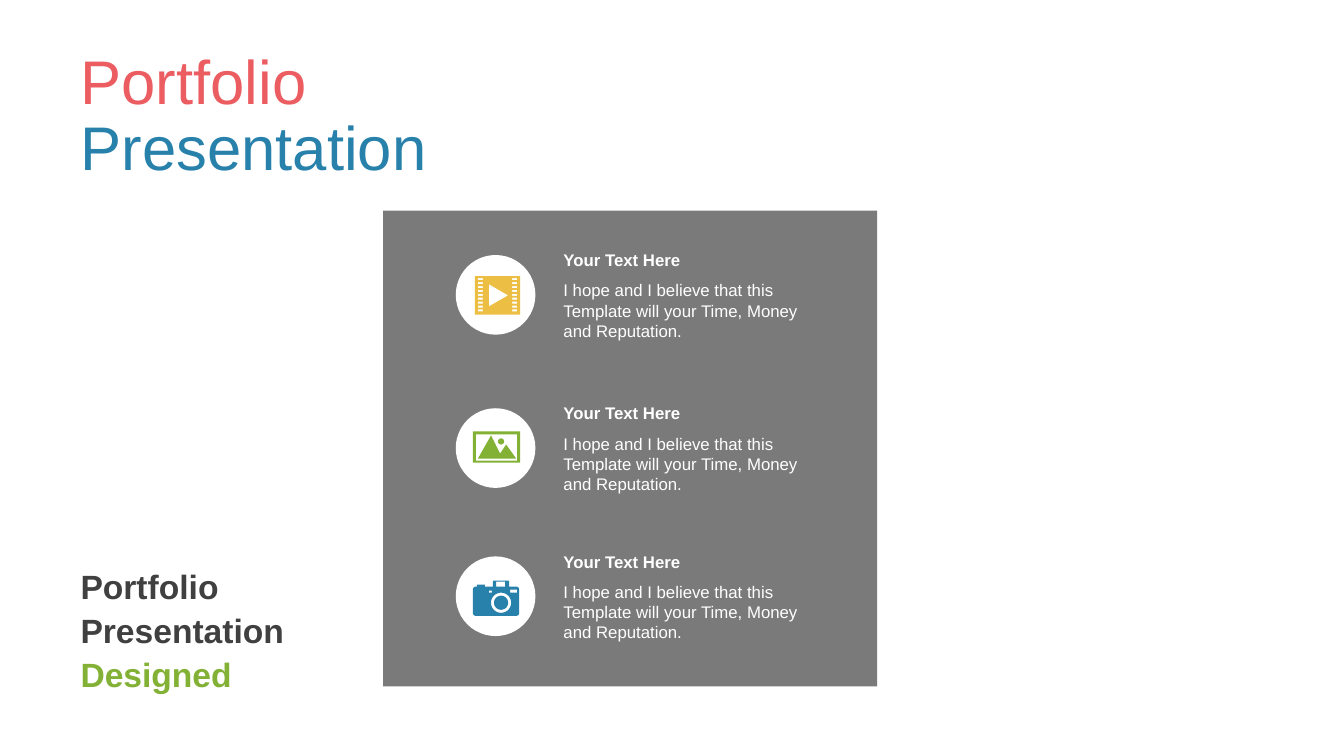
from math import cos, radians, sin

from lxml import etree
from pptx import Presentation
from pptx.dml.color import RGBColor
from pptx.enum.shapes import MSO_SHAPE
from pptx.enum.text import MSO_ANCHOR, MSO_AUTO_SIZE, PP_ALIGN
from pptx.oxml.ns import qn
from pptx.util import Inches, Pt

RECTANGLE, OVAL = MSO_SHAPE.RECTANGLE, MSO_SHAPE.OVAL
TOP, MIDDLE = MSO_ANCHOR.TOP, MSO_ANCHOR.MIDDLE
LEFT, NO_FIT = PP_ALIGN.LEFT, MSO_AUTO_SIZE.NONE
TITLE_ONLY = 5
COLORS = {
    "red": "EC5D62", "blue": "2781AB", "green": "82B135", "yellow": "EDBE44",
    "panel": "595959", "dark": "404040", "white": "FFFFFF",
}
HEADING = "Your Text Here"
BODY = "I hope and I believe that this Template will your Time, Money and Reputation."
DISC = 0.79


def paint(shape, color):
    """Give a shape a plain fill without outline or shadow."""
    shape.fill.solid()
    shape.fill.fore_color.rgb = RGBColor.from_string(COLORS[color])
    shape.line.fill.background()
    shape.shadow.inherit = False
    return shape


def add_preset(page, kind, box, color):
    """Add a painted preset shape in a box given in inches."""
    return paint(page.shapes.add_shape(kind, *map(Inches, box)), color)


def write(frame, spans, size, bold=False, spacing=1.0, anchor=TOP):
    """Write coloured spans into one left-aligned paragraph."""
    frame_format = {"word_wrap": True, "auto_size": NO_FIT, "vertical_anchor": anchor}
    for name, value in frame_format.items():
        setattr(frame, name, value)
    para = frame.paragraphs[0]
    para.alignment, para.line_spacing = LEFT, spacing
    for text, color in spans:
        if text == "\n":
            para.add_line_break()
            continue
        span = para.add_run()
        span.text = text
        for name, value in {"name": "Arial", "size": Pt(size), "bold": bold}.items():
            setattr(span.font, name, value)
        span.font.color.rgb = RGBColor.from_string(COLORS[color])


def add_text(page, box, spans, size, **options):
    """Add a text box in a box given in inches."""
    write(page.shapes.add_textbox(*map(Inches, box)).text_frame, spans, size, **options)


def rectangle(left, top, width, height):
    """Return the corners of a rectangle."""
    right, bottom = left + width, top + height
    return [(left, top), (right, top), (right, bottom), (left, bottom)]


def arc(x, y, radius, start=0, sweep=360):
    """Return points along a clockwise arc."""
    angles = [radians(start + sweep * step / 36) for step in range(37)]
    return [(x + radius * cos(angle), y + radius * sin(angle)) for angle in angles]


def film_contours():
    """Return a film frame with nine perforations a side and a play mark."""
    holes = [rectangle(x, 0.02 + row * 0.31 / 8, 0.05, 0.02)
             for row in range(9) for x in (0.03, 0.37)]
    play = [(0.14, 0.08), (0.14, 0.3), (0.33, 0.19)]
    return [rectangle(0, 0, 0.45, 0.38), play, *holes]


def landscape_contours():
    """Return a framed view of two peaks and a sun."""
    peaks = [(0.18, 0.04), (0.27, 0.22), (0.33, 0.13), (0.43, 0.27), (0.05, 0.27)]
    return [rectangle(0, 0, 0.47, 0.31), rectangle(0.03, 0.03, 0.41, 0.26),
            peaks, arc(0.28, 0.1, 0.03)]


def camera_contours():
    """Return a camera body with its lens, viewfinder and flash."""
    body = [
        (0.04, 0.06), (0.04, 0.04), (0.12, 0.04), (0.12, 0.06), (0.2, 0.06),
        *arc(0.21, 0.01, 0.01, 180, 90), *arc(0.35, 0.01, 0.01, 270, 90), (0.36, 0.06),
        *arc(0.43, 0.09, 0.03, 270, 90), *arc(0.43, 0.32, 0.03, 0, 90),
        *arc(0.03, 0.32, 0.03, 90, 90), *arc(0.03, 0.09, 0.03, 180, 90),
    ]
    return [body, arc(0.28, 0.22, 0.1), arc(0.28, 0.22, 0.07),
            rectangle(0.23, 0.01, 0.09, 0.05), rectangle(0.16, 0.1, 0.03, 0.02),
            rectangle(0.37, 0.09, 0.07, 0.03)]


def add_icon(page, left, top, contours, color):
    """Draw closed contours as one shape, inner contours being holes."""
    placed = [[(Inches(left + x), Inches(top + y)) for x, y in contour]
              for contour in contours]
    builder = page.shapes.build_freeform(*placed[0][0])
    builder.add_line_segments(placed[0][1:], close=True)
    for contour in placed[1:]:
        builder.move_to(*contour[0])
        builder.add_line_segments(contour[1:], close=True)
    paint(builder.convert_to_shape(), color)


def add_feature(page, left, top, contours, color, inset):
    """Place a disc with its icon, and a heading and text beside it."""
    add_preset(page, OVAL, (left, top, DISC, DISC), "white")
    add_icon(page, left + inset[0], top + inset[1], contours, color)
    text_left = left + 0.97
    add_text(page, (text_left, top - 0.1, 2.63, 0.3), [(HEADING, "white")], 12, bold=True)
    add_text(page, (text_left, top + 0.2, 2.63, 0.71), [(BODY, "white")], 12)


def add_panel(page, left, top, width, height):
    """Place the translucent panel and its three features."""
    panel = add_preset(page, RECTANGLE, (left, top, width, height), "panel")
    shade = panel.fill._xPr.find(".//" + qn("a:srgbClr"))
    etree.SubElement(shade, qn("a:alpha"), val="80000")
    features = [
        (0.44, film_contours(), "yellow", (0.19, 0.21)),
        (1.96, landscape_contours(), "green", (0.17, 0.23)),
        (3.43, camera_contours(), "blue", (0.17, 0.24)),
    ]
    for offset, contours, color, inset in features:
        add_feature(page, left + 0.72, top + offset, contours, color, inset)


def add_title(page, left, top, width, height):
    """Fill the title placeholder with its two coloured lines."""
    title = page.shapes.title
    box = {"left": left, "top": top, "width": width, "height": height}
    for name, value in box.items():
        setattr(title, name, Inches(value))
    spans = [("Portfolio ", "red"), ("\n", None), ("Presentation", "blue")]
    write(title.text_frame, spans, 44, spacing=0.9, anchor=MIDDLE)


def main():
    """Build and save the portfolio slide."""
    deck = Presentation()
    deck.slide_width, deck.slide_height = Inches(13.33), Inches(7.5)
    page = deck.slides.add_slide(deck.slide_layouts[TITLE_ONLY])
    add_title(page, 0.7, 0.26, 6.09, 1.81)
    add_panel(page, 3.8, 2.09, 4.9, 4.72)
    caption = [("Portfolio Presentation ", "dark"), ("Designed", "green")]
    add_text(page, (0.7, 5.38, 2.58, 1.7), caption, 24,
             bold=True, spacing=1.1, anchor=MIDDLE)
    deck.save("out.pptx")


if __name__ == "__main__":
    main()
